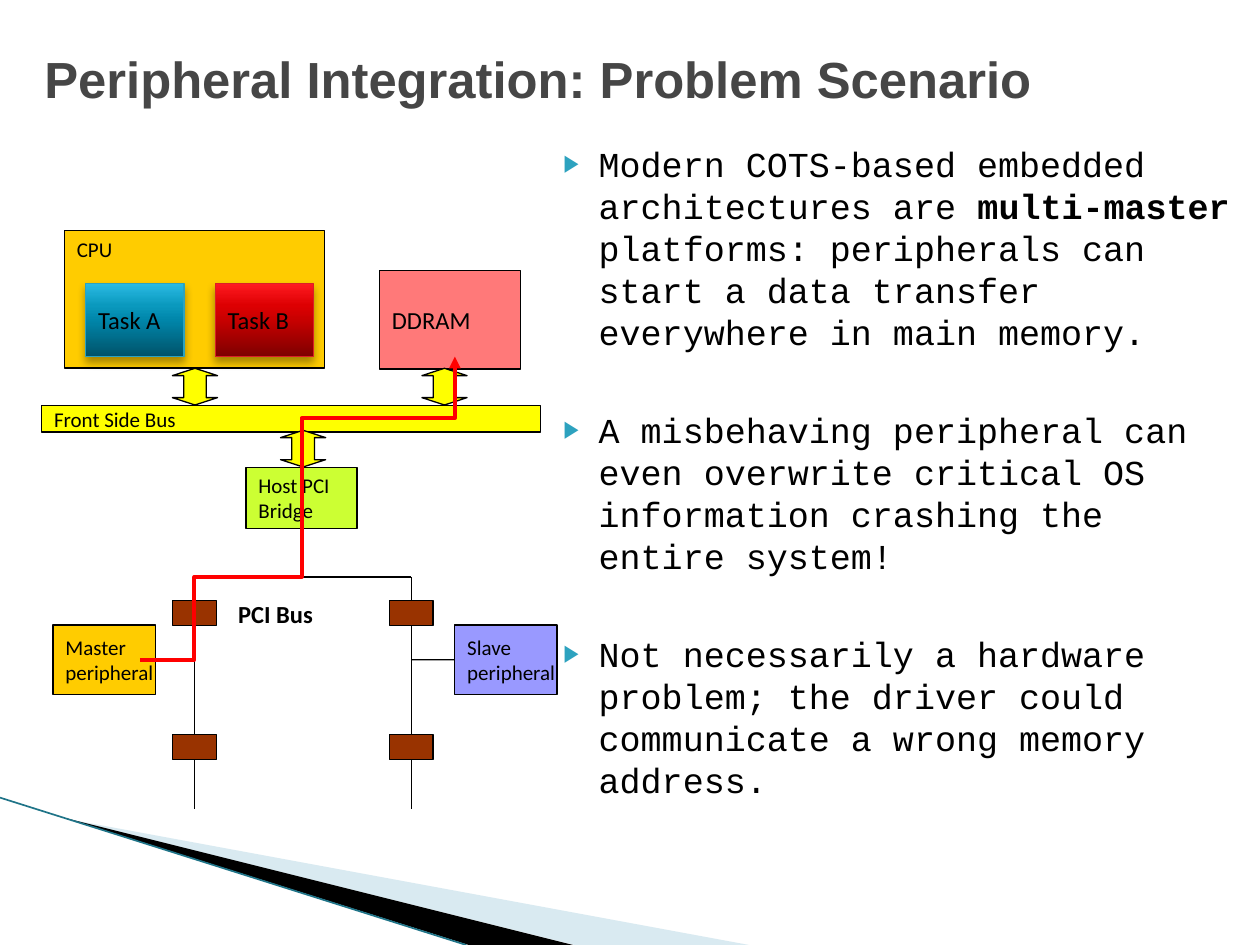
from lxml.etree import SubElement
from pptx import Presentation
from pptx.dml.color import RGBColor
from pptx.enum.shapes import MSO_CONNECTOR, MSO_SHAPE
from pptx.enum.text import MSO_ANCHOR, MSO_AUTO_SIZE, PP_ALIGN
from pptx.oxml.ns import qn
from pptx.util import Cm, Pt

COLORS = {
    "black": "000000", "title": "464646", "bullet": "2DA2BF",
    "pale": "A0CBDC", "edge": "1F7488", "orange": "FFCC00",
    "yellow": "FFFF00", "pink": "FF7979", "green": "CCFF33",
    "brown": "993300", "violet": "9999FF", "red": "FF0000",
    "task_a_line": "2DA2BF", "task_b_line": "DA1F28",
}
TASK_A_STOPS = [(0, "005269"), (50, "0086AA"), (70, "0A99BE"), (100, "2ABAE3")]
TASK_B_STOPS = [(0, "7D0000"), (50, "C70000"), (70, "DD0002"), (100, "FF1A21")]

TOP, LEFT, BOTTOM, RIGHT = range(4)
LEFT_BUS, BRIDGE_X, RIGHT_BUS = 3.92, 6.08, 8.29
BUS_TOP, PERIPHERAL_Y, BUS_END = 11.63, 13.3, 16.3

BULLETS = [
    [("Modern COTS-based embedded architectures are ", False),
     ("multi-master", True),
     (" platforms: peripherals can start a data transfer "
      "everywhere in main memory.", False)],
    [("A misbehaving peripheral can even overwrite critical OS "
      "information crashing the entire system!", False)],
    [("Not necessarily a hardware problem; the driver could "
      "communicate a wrong memory address.", False)],
]


def rgb(name):
    return RGBColor.from_string(COLORS[name])


def add_run(paragraph, text, size, font="Calibri", color="black", bold=False):
    run = paragraph.add_run()
    run.text = text
    run.font.size = Pt(size)
    run.font.name = font
    run.font.bold = bold
    run.font.color.rgb = rgb(color)


def set_line(line, color="black", width=0.75):
    line.color.rgb = rgb(color)
    line.width = Pt(width)


def add_block(slide, box, fill=None, lines=(), size=12, anchor=MSO_ANCHOR.MIDDLE,
              kind=MSO_SHAPE.RECTANGLE):
    """Add an outlined preset shape with one left-aligned paragraph per line."""
    shape = slide.shapes.add_shape(kind, *map(Cm, box))
    shape.shadow.inherit = False
    if fill:
        shape.fill.solid()
        shape.fill.fore_color.rgb = rgb(fill)
    set_line(shape.line)
    frame = shape.text_frame
    if lines:
        frame.word_wrap = False
        frame.vertical_anchor = anchor
    for index, text in enumerate(lines):
        paragraph = frame.add_paragraph() if index else frame.paragraphs[0]
        paragraph.alignment = PP_ALIGN.LEFT
        add_run(paragraph, text, size)
    return shape


def add_task(slide, left, text, stops, line_color):
    """Add a task box with a vertical gradient and a soft shadow."""
    shape = add_block(slide, (left, 5.72, 1.98, 1.47), lines=[text], size=14)
    set_line(shape.line, line_color)
    shape.fill.gradient()
    shape.fill.gradient_angle = 90
    properties = shape.element.spPr
    stop_list = properties.find(qn("a:gradFill")).find(qn("a:gsLst"))
    for stop in list(stop_list):
        stop_list.remove(stop)
    for position, color in stops:
        stop = SubElement(stop_list, qn("a:gs"), pos=str(position * 1000))
        SubElement(stop, qn("a:srgbClr"), val=color)
    shadow = SubElement(properties.find(qn("a:effectLst")), qn("a:outerShdw"),
                        blurRad=str(Pt(5)), dist=str(Pt(3)), dir="5400000",
                        rotWithShape="0")
    shadow_color = SubElement(shadow, qn("a:srgbClr"), val=COLORS["black"])
    SubElement(shadow_color, qn("a:alpha"), val="35000")


def add_bus_arrow(slide, left, top):
    arrow = add_block(slide, (left, top, 0.74, 0.91), "yellow",
                      kind=MSO_SHAPE.LEFT_RIGHT_ARROW)
    arrow.rotation = 90
    arrow.adjustments[0] = 0.5
    arrow.adjustments[1] = 0.2


def add_line(slide, start, end, begin=None, finish=None, color="black", width=0.75):
    """Add a line; begin and finish are optional (shape, side) joints."""
    connector = slide.shapes.add_connector(
        MSO_CONNECTOR.STRAIGHT, *map(Cm, (*start, *end)))
    set_line(connector.line, color, width)
    SubElement(connector.element.spPr, qn("a:effectLst"))
    if begin:
        connector.begin_connect(*begin)
    if finish:
        connector.end_connect(*finish)


def add_outline(slide, points, closed):
    start, *others = [(Cm(x), Cm(y)) for x, y in points]
    builder = slide.shapes.build_freeform(*start)
    builder.add_line_segments(others, close=closed)
    shape = builder.convert_to_shape()
    shape.shadow.inherit = False
    return shape


def add_wedge(slide, points, color, opacity=100):
    shape = add_outline(slide, points, True)
    shape.fill.solid()
    shape.fill.fore_color.rgb = rgb(color)
    shape.line.fill.background()
    if opacity < 100:
        fill_color = shape.element.spPr.find(qn("a:solidFill"))[0]
        SubElement(fill_color, qn("a:alpha"), val=str(opacity * 1000))


def add_transfer_path(slide):
    """Draw the red route from the master peripheral into memory."""
    shape = add_outline(slide, [
        (2.82, PERIPHERAL_Y), (LEFT_BUS, PERIPHERAL_Y), (LEFT_BUS, BUS_TOP),
        (BRIDGE_X, BUS_TOP), (BRIDGE_X, 8.43), (9.17, 8.43), (9.17, 7.19)], False)
    shape.fill.background()
    set_line(shape.line, "red", 2.25)
    SubElement(shape.line._get_or_add_ln(), qn("a:tailEnd"), type="triangle")


def add_title(slide):
    title = slide.shapes.title
    title.left, title.top, title.width, title.height = map(Cm, (0.64, 0.2, 24.13, 2.74))
    frame = title.text_frame
    frame.auto_size = MSO_AUTO_SIZE.NONE
    frame.vertical_anchor = MSO_ANCHOR.MIDDLE
    frame.paragraphs[0].alignment = PP_ALIGN.LEFT
    add_run(frame.paragraphs[0], "Peripheral Integration: Problem Scenario",
            29, "Arial", "title", True)


def add_bullets(slide):
    frame = slide.shapes.add_textbox(*map(Cm, (10.8, 2.74, 14.6, 14.17))).text_frame
    frame.word_wrap = True
    for index, runs in enumerate(BULLETS):
        paragraph = frame.add_paragraph() if index else frame.paragraphs[0]
        paragraph.line_spacing = Pt(24)
        if index:
            paragraph.space_before = Pt(32)
        properties = paragraph._p.get_or_add_pPr()
        properties.set("marL", str(Cm(1.02)))
        properties.set("indent", str(-Cm(0.71)))
        bullet_color = SubElement(properties, qn("a:buClr"))
        SubElement(bullet_color, qn("a:srgbClr"), val=COLORS["bullet"])
        SubElement(properties, qn("a:buSzPct"), val="68000")
        SubElement(properties, qn("a:buFont"), typeface="Arial")
        SubElement(properties, qn("a:buChar"), char="▶")
        for text, bold in runs:
            add_run(paragraph, text, 20, "Courier New", bold=bold)


def add_pci_branch(slide, center, peripheral, side):
    """Add one branch of the PCI bus: two slots, their wires and a peripheral link."""
    upper, lower = [add_block(slide, (center - 0.44, top, 0.88, 0.5), "brown")
                    for top in (12.11, 14.81)]
    add_line(slide, (BRIDGE_X, BUS_TOP), (center, BUS_TOP))
    add_line(slide, (center, BUS_TOP), (center, 12.11), finish=(upper, TOP))
    add_line(slide, (center, 12.61), (center, 14.81), (upper, BOTTOM), (lower, TOP))
    add_line(slide, (center, 15.31), (center, BUS_END), (lower, BOTTOM))
    add_line(slide, (center, PERIPHERAL_Y), (center, PERIPHERAL_Y),
             finish=(peripheral, side))


def add_architecture(slide):
    add_block(slide, (1.3, 4.65, 5.25, 2.77), "orange", ["CPU"], anchor=MSO_ANCHOR.TOP)
    add_block(slide, (0.84, 8.18, 10.06, 0.53), "yellow", ["Front Side Bus"])
    add_block(slide, (7.65, 5.46, 2.84, 1.98), "pink", ["DDRAM"], 14)
    for left, top in ((3.56, 7.34), (8.59, 7.34), (5.74, 8.59)):
        add_bus_arrow(slide, left, top)
    bridge = add_block(slide, (4.96, 9.42, 2.24, 1.24), "green", ["Host PCI", "Bridge"])
    add_line(slide, (BRIDGE_X, 10.66), (BRIDGE_X, BUS_TOP), (bridge, BOTTOM))
    master, slave = [
        add_block(slide, (left, 12.6, 2.06, 1.4), fill, [role, "peripheral"])
        for left, fill, role in ((1.07, "orange", "Master"), (9.17, "violet", "Slave"))]
    add_pci_branch(slide, LEFT_BUS, master, RIGHT)
    add_pci_branch(slide, RIGHT_BUS, slave, LEFT)
    add_task(slide, 1.73, "Task A", TASK_A_STOPS, "task_a_line")
    add_task(slide, 4.34, "Task B", TASK_B_STOPS, "task_b_line")
    add_transfer_path(slide)
    label = slide.shapes.add_textbox(*map(Cm, (4.8, 11.96, 2.31, 1.09))).text_frame
    label.word_wrap = True
    label.margin_left = label.margin_right = 0
    add_run(label.paragraphs[0], "PCI Bus", 14, bold=True)


def main():
    presentation = Presentation()
    presentation.slide_width, presentation.slide_height = Cm(25.4), Cm(19.05)
    slide = presentation.slides.add_slide(presentation.slide_layouts[5])
    add_wedge(slide, [(1.4, 16.52), (15.1, 19.05), (11.58, 19.05)], "pale", 40)
    add_wedge(slide, [(1.35, 16.5), (11.55, 19.05), (9.45, 19.05)], "black")
    add_line(slide, (0, 16.08), (9.4, 19.05), color="edge", width=0.95)
    add_title(slide)
    add_bullets(slide)
    add_architecture(slide)
    presentation.save("out.pptx")


if __name__ == "__main__":
    main()
